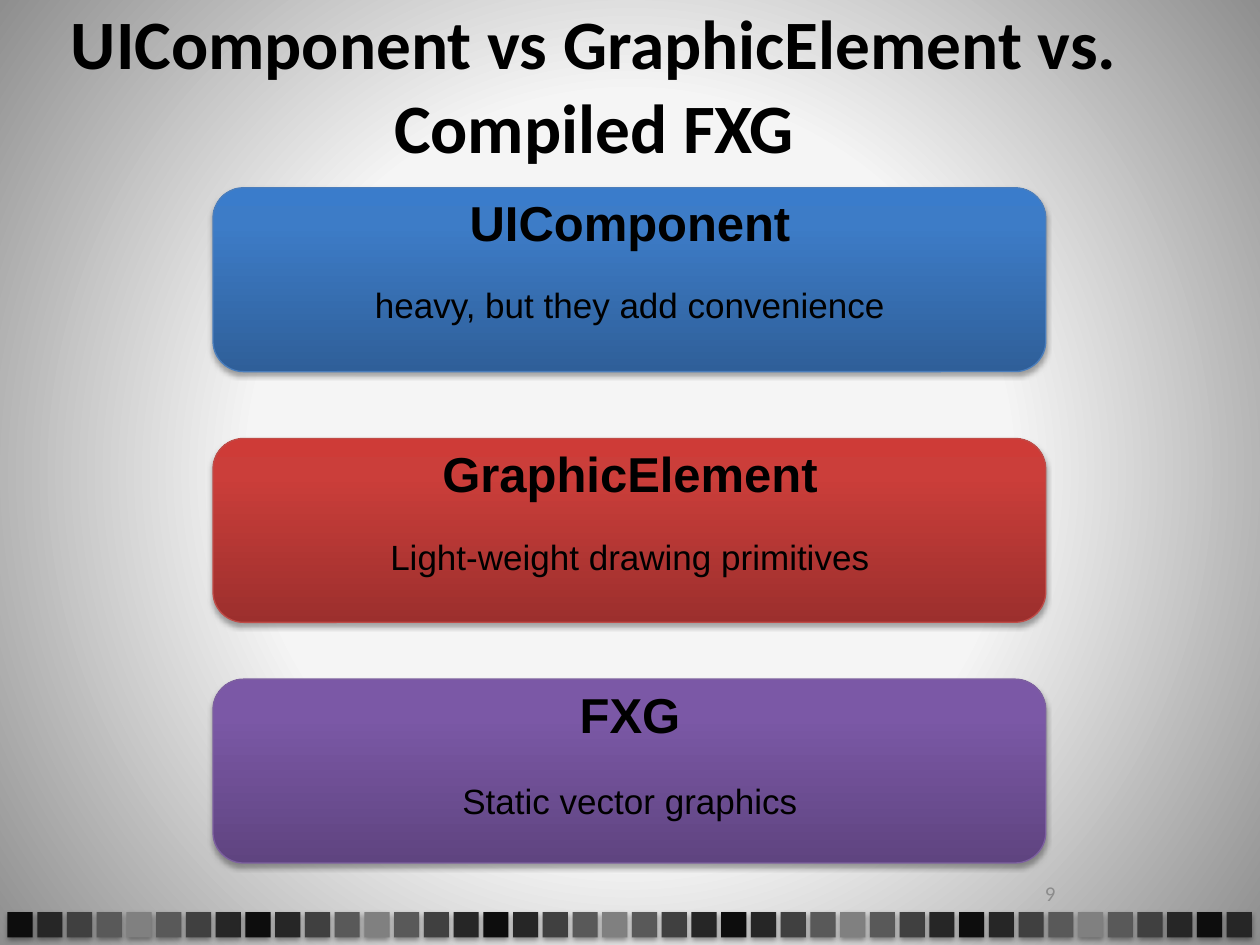
"""Build a slide that compares three kinds of drawing objects."""
from lxml import etree
from pptx import Presentation
from pptx import util as u
from pptx.dml.color import RGBColor
from pptx.enum import shapes, text
from pptx.oxml import ns

COLS, ROWS = 100, 75
WIDE, HIGH = u.Inches(10), u.Inches(7.5)
TILES = ["0D0D0D", "262626", "404040", "595959",
         "808080", "595959", "404040", "262626"]
CARDS = [
    ("UIComponent", "heavy, but they add convenience", 14.9, 28, 7.1,
     ["2F5F99", "3D7CC7", "3A7CCB"], "4B7EBC"),
    ("GraphicElement", "Light-weight drawing primitives", 34.8, 32.1, 7.2,
     ["9C2F2D", "CB3E3A", "CE3B37"], "BF4C48"),
    ("FXG", "Static vector graphics", 53.9, 10.1, 7.5,
     ["5F4480", "7B58A6", "7C57A8"], "7D60A0"),
]


def color(code):
    """Turn a hex string into a colour."""
    return RGBColor.from_string(code)


def place(col, row, cols, rows):
    """Turn grid columns and rows into left, top, width and height."""
    return (round(WIDE * col / COLS), round(HIGH * row / ROWS),
            round(WIDE * cols / COLS), round(HIGH * rows / ROWS))


def node(base, tag, **attrs):
    """Add a drawing element below another one."""
    return etree.SubElement(base, ns.qn("a:" + tag),
                            {key: str(val) for key, val in attrs.items()})


def blend(fill, root, stops):
    """Give a fill gradient stops and return its element."""
    fill.gradient()
    grad = next(root.iter(ns.qn("a:gradFill")))
    for child in list(grad):
        grad.remove(child)
    group = node(grad, "gsLst")
    for share, code in stops:
        node(node(group, "gs", pos=share * 1000), "srgbClr", val=code)
    return grad


def shade(shape, alpha, dist):
    """Cast a soft shadow straight down."""
    shape.shadow.inherit = False
    effect = shape._element.spPr.find(ns.qn("a:effectLst"))
    outer = node(effect, "outerShdw", blurRad=u.Pt(3.1), dist=u.Pt(dist),
                 dir=5400000, algn="ctr", rotWithShape=0)
    node(node(outer, "srgbClr", val="000000"), "alpha", val=alpha * 1000)


def write(shape, words, size, face="Arial", code="000000", bold=False,
          wrap=True, anchor=text.MSO_ANCHOR.TOP):
    """Set one centred, formatted line of text and return its paragraph."""
    frame = shape.text_frame
    frame.text = words
    frame.word_wrap = wrap
    frame.auto_size = text.MSO_AUTO_SIZE.NONE
    frame.vertical_anchor = anchor
    para = frame.paragraphs[0]
    para.alignment = text.PP_ALIGN.CENTER
    font = para.runs[0].font
    font.name, font.size, font.bold = face, u.Pt(size), bold
    font.color.rgb = color(code)
    return para


def paint(slide):
    """Fill the background with a round grey glow."""
    grad = blend(slide.background.fill, slide.element,
                 [(48, "F5F5F5"), (100, "8E8E8E")])
    half = dict.fromkeys("ltrb", 50000)
    node(node(grad, "path", path="circle"), "fillToRect", **half)


def strip(slide, count=42, first=0.6, step=2.36):
    """Line up the grey tiles along the lower edge."""
    for num in range(count):
        tile = slide.shapes.add_shape(shapes.MSO_SHAPE.RECTANGLE,
                                      *place(first + num * step, 72.4, 2, 2))
        tile.fill.solid()
        tile.fill.fore_color.rgb = color(TILES[num % len(TILES)])
        tile.line.fill.background()
        shade(tile, 38, 1.6)


def head(slide, words):
    """Move and format the title placeholder."""
    title = slide.shapes.title
    title.left, title.top, title.width, title.height = place(
        2.5, 4.4, 89.3, 4.5)
    write(title, words, 39.6, "Calibri", bold=True,
          anchor=text.MSO_ANCHOR.MIDDLE)


def card(slide, name, note, row, cols, drop, tones, edge):
    """Draw a rounded card with a heading and a note."""
    panel = slide.shapes.add_shape(shapes.MSO_SHAPE.ROUNDED_RECTANGLE,
                                   *place(16.9, row, 66.1, 14.6))
    grad = blend(panel.fill, panel._element, zip((0, 80, 100), tones))
    node(grad, "lin", ang=16200000, scaled=0)
    panel.line.color.rgb = color(edge)
    panel.line.width = u.Pt(0.75)
    shade(panel, 35, 1.8)
    label = slide.shapes.add_textbox(
        *place((COLS - cols) / 2, row - 0.1, cols, 5.7))
    write(label, name, 28, bold=True, wrap=False)
    body = slide.shapes.add_textbox(*place(28.6, row + drop, 42.8, 5))
    para = write(body, note, 20)
    para.space_before = u.Pt(12)
    props = para._p.get_or_add_pPr()
    props.set("marL", str(u.Inches(0.25)))
    props.set("indent", str(u.Inches(-0.25)))


def main():
    """Build and save the slide."""
    deck = Presentation()
    deck.slide_width, deck.slide_height = WIDE, HIGH
    slide = deck.slides.add_slide(deck.slide_layouts[5])
    paint(slide)
    strip(slide)
    head(slide, "UIComponent vs GraphicElement vs. Compiled FXG")
    page = slide.shapes.add_textbox(*place(71.7, 68.9, 23.3, 4))
    write(page, "9", 12, "Calibri", "8C8C8C", anchor=text.MSO_ANCHOR.MIDDLE)
    for item in CARDS:
        card(slide, *item)
    deck.save("out.pptx")


if __name__ == "__main__":
    main()
